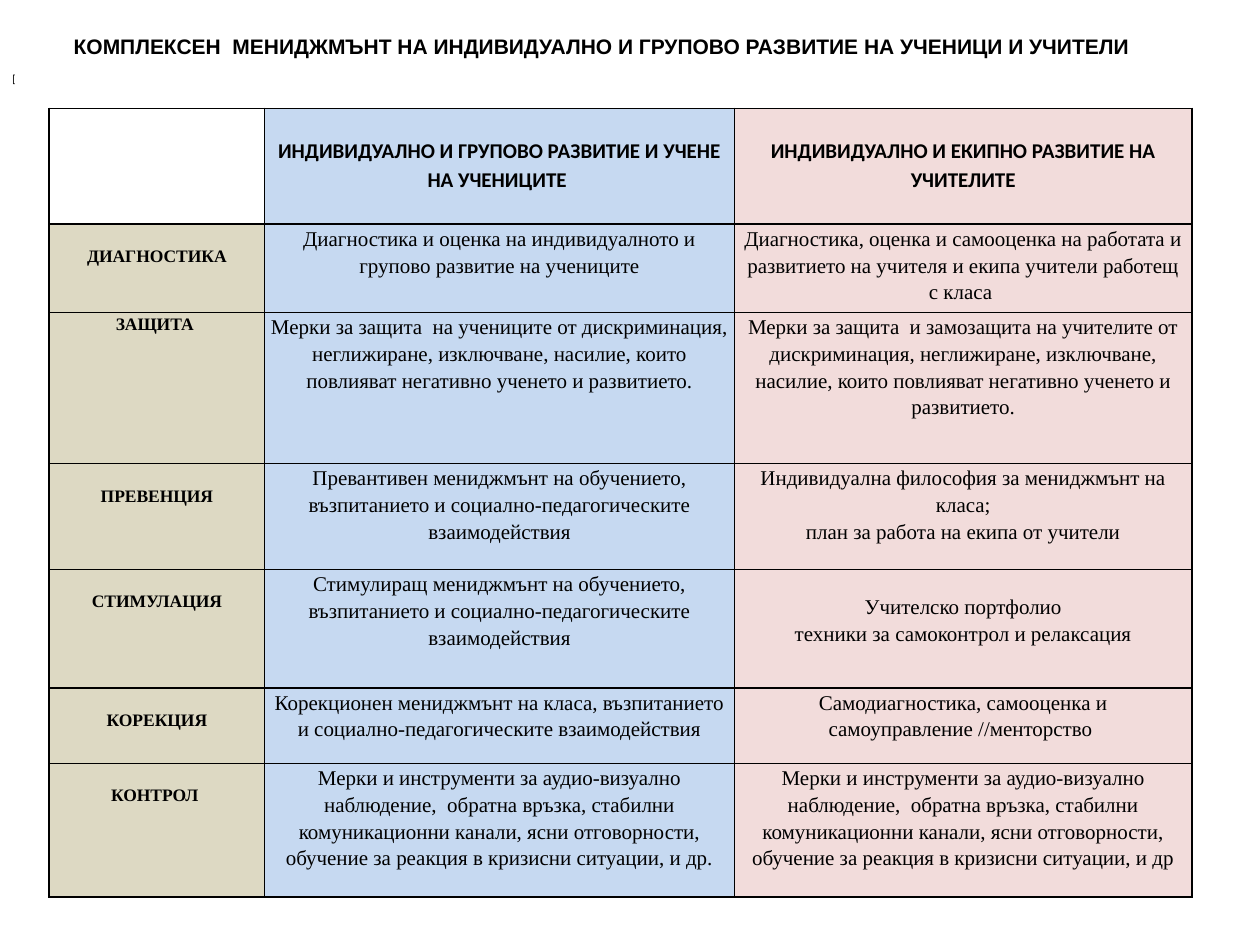
"""Build a slide with a table on managing the development of pupils and teachers."""
from lxml.etree import SubElement
from pptx import Presentation
from pptx.dml.color import RGBColor
from pptx.enum.text import MSO_ANCHOR, PP_ALIGN
from pptx.oxml.ns import qn
from pptx.util import Inches, Pt

COLORS = {
    "text": "000000",
    "stage": "DDD9C3",
    "pupils": "C6D9F1",
    "teachers": "F2DCDB",
}
COLUMNS = [("stage", 1.71), ("pupils", 3.73), ("teachers", 3.63)]
ROW_HEIGHTS = [0.92, 0.7, 1.2, 0.84, 0.94, 0.6, 1.06]
HEADER_GAP, STAGE_GAP, PORTFOLIO_GAP = 0.21, 0.16, 0.18
CONTROL = (
    "Мерки и инструменти за аудио-визуално наблюдение,  обратна връзка, стабилни "
    "комуникационни канали, ясни отговорности, обучение за реакция в кризисни ситуации, и др"
)
ROWS = [
    ("",
     "ИНДИВИДУАЛНО И ГРУПОВО РАЗВИТИЕ И УЧЕНЕ НА УЧЕНИЦИТЕ ",
     "ИНДИВИДУАЛНО И ЕКИПНО РАЗВИТИЕ НА УЧИТЕЛИТЕ"),
    ("ДИАГНОСТИКА",
     "Диагностика и оценка на индивидуалното и групово развитие на учениците",
     "Диагностика, оценка и самооценка на работата и развитието на учителя "
     "и екипа учители работещ с класа "),
    ("ЗАЩИТА ",
     "Мерки за защита  на учениците от дискриминация, неглижиране, изключване, "
     "насилие, които повлияват негативно ученето и развитието.",
     "Мерки за защита  и замозащита на учителите от дискриминация, неглижиране, "
     "изключване, насилие, които повлияват негативно ученето и развитието."),
    ("ПРЕВЕНЦИЯ",
     "Превантивен мениджмънт на обучението, възпитанието и "
     "социално-педагогическите взаимодействия",
     "Индивидуална философия за мениджмънт на класа;\nплан за работа на екипа от учители"),
    ("СТИМУЛАЦИЯ",
     "Стимулиращ мениджмънт на обучението, възпитанието и "
     "социално-педагогическите взаимодействия",
     "Учителско портфолио\nтехники за самоконтрол и релаксация"),
    ("КОРЕКЦИЯ",
     "Корекционен мениджмънт на класа, възпитанието и "
     "социално-педагогическите взаимодействия",
     "Самодиагностика, самооценка и самоуправление //менторство "),
    ("КОНТРОЛ ", CONTROL + ".", CONTROL),
]


def add_run(paragraph, text, font, size, bold=False):
    run = paragraph.add_run()
    run.text = text
    run.font.name = font
    run.font.size = Pt(size)
    run.font.bold = bold
    run.font.color.rgb = RGBColor.from_string(COLORS["text"])
    return run


def add_borders(cell):
    properties = cell._tc.get_or_add_tcPr()
    for position, side in enumerate(("a:lnL", "a:lnR", "a:lnT", "a:lnB")):
        line = properties.makeelement(qn(side), {"w": str(Pt(1))})
        fill = SubElement(line, qn("a:solidFill"))
        SubElement(fill, qn("a:srgbClr"), val=COLORS["text"])
        properties.insert(position, line)


prs = Presentation()
prs.slide_width, prs.slide_height = Inches(10), Inches(7.5)
slide = prs.slides.add_slide(prs.slide_layouts[6])

matrix = slide.shapes.add_table(
    len(ROWS), len(COLUMNS), Inches(0.39), Inches(0.86),
    Inches(sum(width for _, width in COLUMNS)), Inches(sum(ROW_HEIGHTS)),
).table
matrix.first_row = matrix.horz_banding = False
for column, (_, width) in zip(matrix.columns, COLUMNS):
    column.width = Inches(width)

for r, (row_texts, height) in enumerate(zip(ROWS, ROW_HEIGHTS)):
    matrix.rows[r].height = Inches(height)
    for c, (text, (audience, _)) in enumerate(zip(row_texts, COLUMNS)):
        cell = matrix.cell(r, c)
        is_header, is_stage = r == 0, c == 0
        if text:
            cell.fill.solid()
            cell.fill.fore_color.rgb = RGBColor.from_string(COLORS[audience])
        else:
            cell.fill.background()
        add_borders(cell)
        gap = 0
        if is_header:
            gap = HEADER_GAP
        elif is_stage and text != "ЗАЩИТА ":
            gap = STAGE_GAP
        elif text.startswith("Учителско"):
            gap = PORTFOLIO_GAP
        cell.margin_left = cell.margin_right = Inches(0.05)
        cell.margin_top, cell.margin_bottom = Inches(gap), Inches(0)
        for i, line_text in enumerate(text.split("\n")):
            paragraph = cell.text_frame.add_paragraph() if i else cell.text_frame.paragraphs[0]
            paragraph.alignment = PP_ALIGN.CENTER
            paragraph.line_spacing = 1.15
            if line_text:
                add_run(paragraph, line_text, "Calibri" if is_header else "Times New Roman",
                        10 if is_stage else 12, is_header or is_stage)

title = slide.shapes.add_textbox(Inches(-0.01), Inches(0.21), Inches(9.53), Inches(0.31)).text_frame
bracket = slide.shapes.add_textbox(Inches(0), Inches(0.51), Inches(0.23), Inches(0.27)).text_frame
for frame in (title, bracket):
    frame.word_wrap = False
    frame.vertical_anchor = MSO_ANCHOR.MIDDLE
title.paragraphs[0].alignment = PP_ALIGN.CENTER
add_run(title.paragraphs[0],
        " КОМПЛЕКСЕН  МЕНИДЖМЪНТ НА ИНДИВИДУАЛНО И ГРУПОВО РАЗВИТИЕ НА УЧЕНИЦИ И УЧИТЕЛИ",
        "Arial", 12, True)
raised = add_run(bracket.paragraphs[0], "[", "Arial", 10)
raised.font._element.set("baseline", "30000")

prs.save("out.pptx")
